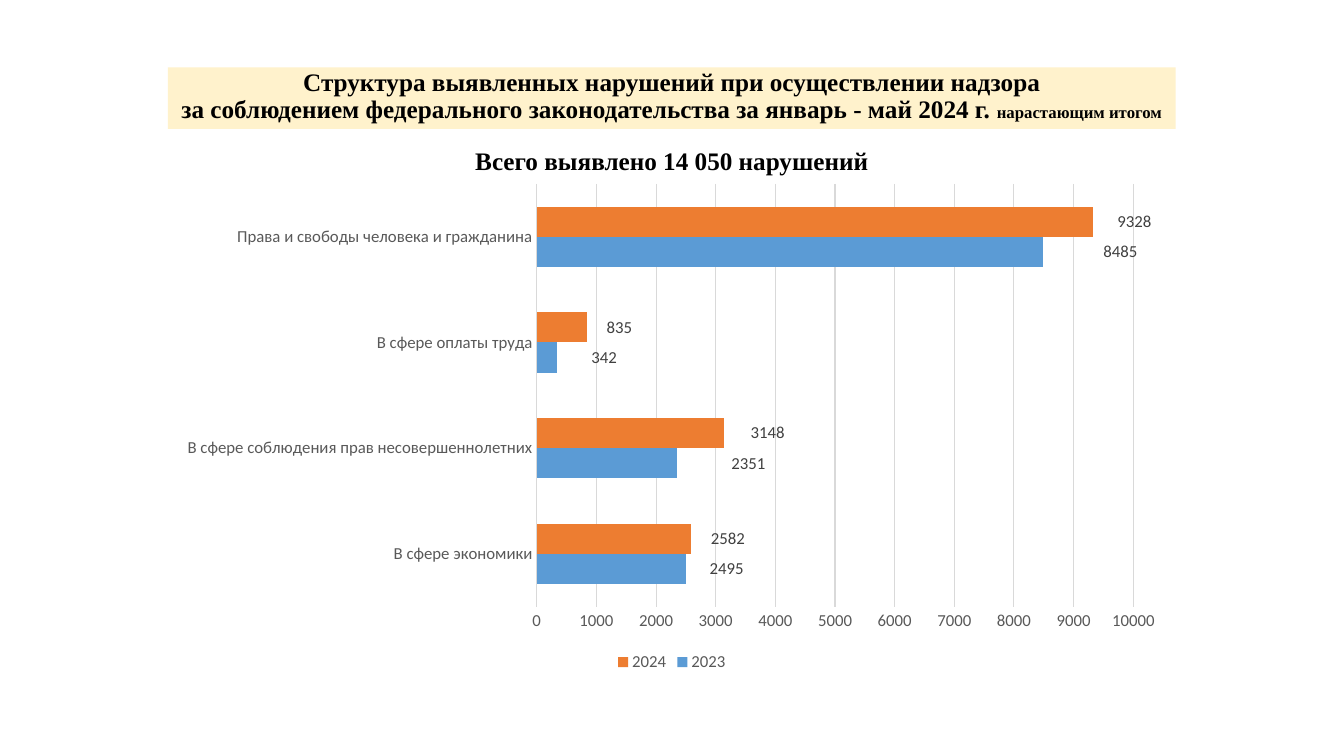
from dataclasses import dataclass

from lxml.etree import SubElement
from pptx import Presentation
from pptx.chart.data import CategoryChartData
from pptx.chart.series import BarSeries
from pptx.dml.color import RGBColor as RGB
from pptx.enum.chart import XL_CHART_TYPE as ChartType, XL_LABEL_POSITION as LabelPos
from pptx.enum.chart import XL_LEGEND_POSITION as LegendPos, XL_TICK_MARK as Tick
from pptx.enum.text import MSO_ANCHOR as Anchor, MSO_AUTO_SIZE as AutoSize, PP_ALIGN as Align
from pptx.oxml.ns import qn
from pptx.slide import Slide
from pptx.text.text import Font
from pptx.util import Cm, Pt


@dataclass(frozen=True)
class Theme:
    heading_font: str = "Times New Roman"
    chart_font: str = "Calibri"
    heading_size: int = 18
    note_size: int = 12
    chart_size: int = 12
    ink: str = "000000"
    band: str = "FFF2CC"
    axis: str = "595959"
    label: str = "404040"
    grid: str = "D9D9D9"


@dataclass(frozen=True)
class YearSeries:
    year: str
    values: tuple[int, ...]
    color: str
    label_shifts: tuple[float, ...]


THEME = Theme()
LEFT, WIDTH = Cm(4.23), Cm(25.4)
PLOT_AREA = {"x": 0.366, "y": 0.021, "w": 0.592, "h": 0.841}
SPHERES = (
    "В сфере экономики",
    "В сфере соблюдения прав несовершеннолетних",
    "В сфере оплаты труда",
    "Права и свободы человека и гражданина",
)
YEARS = (
    YearSeries("2023", (2495, 2351, 342, 8485), "5B9BD5", (0.02, 0.05, 0.03, 0.056)),
    YearSeries("2024", (2582, 3148, 835, 9328), "ED7D31", (0.016, 0.022, 0.016, 0.02)),
)


def style_font(font: Font, name: str, size: int, color: str, bold: bool = False) -> None:
    """Apply one type style."""
    font.name, font.size, font.bold = name, Pt(size), bold
    font.color.rgb = RGB.from_string(color)


def style_heading(font: Font) -> None:
    """Apply the heading type style."""
    style_font(font, THEME.heading_font, THEME.heading_size, THEME.ink, bold=True)


def add_title(s: Slide) -> None:
    """Fill the title placeholder and its coloured band."""
    sp = s.shapes.title
    sp.left, sp.top, sp.width, sp.height = LEFT, Cm(1.7), WIDTH, Cm(1.55)
    sp.fill.solid()
    sp.fill.fore_color.rgb = RGB.from_string(THEME.band)
    tf = sp.text_frame
    tf.word_wrap, tf.auto_size, tf.vertical_anchor = True, AutoSize.NONE, Anchor.BOTTOM
    p = tf.paragraphs[0]
    p.alignment, p.line_spacing = Align.CENTER, 0.9
    style_heading(p.font)
    p.add_run().text = "Структура выявленных нарушений при осуществлении надзора"
    p.add_line_break()
    p.add_run().text = "за соблюдением федерального законодательства за январь - май 2024 г. "
    r = p.add_run()
    r.text = "нарастающим итогом"
    r.font.size = Pt(THEME.note_size)


def add_total(s: Slide) -> None:
    """Add the line with the total number of violations."""
    tf = s.shapes.add_textbox(LEFT, Cm(3.68), WIDTH, Cm(0.91)).text_frame
    tf.word_wrap = True
    p = tf.paragraphs[0]
    p.text = "Всего выявлено 14 050 нарушений"
    p.alignment, p.line_spacing = Align.CENTER, 0.8
    style_heading(p.font)


def add_layout(parent, **sizes: float):
    """Give a chart part a manual layout and return the layout element."""
    layout = SubElement(parent, qn("c:layout"))
    manual = SubElement(layout, qn("c:manualLayout"))
    for tag, value in sizes.items():
        SubElement(manual, qn(f"c:{tag}")).set("val", str(value))
    return layout


def style_series(series: BarSeries, spec: YearSeries) -> None:
    """Colour a series and set its shifted value labels."""
    series.format.fill.solid()
    series.format.fill.fore_color.rgb = RGB.from_string(spec.color)
    series.invert_if_negative = False
    labels = series.data_labels
    labels.show_value, labels.position = True, LabelPos.OUTSIDE_END
    style_font(labels.font, THEME.chart_font, THEME.chart_size, THEME.label)
    for i in range(len(spec.values)):
        label = series.points[i].data_label
        style_font(label.font, THEME.chart_font, THEME.chart_size, THEME.label)
        label.position = LabelPos.OUTSIDE_END
    ser = series._element
    for node, shift in zip(ser.xpath("c:dLbls/c:dLbl"), spec.label_shifts):
        node.insert(1, add_layout(node, x=shift, y=0))
    for node in ser.xpath("c:dLbls/c:showLeaderLines"):
        node.set("val", "0")


def add_violations_chart(s: Slide) -> None:
    """Add the bar chart of violations by sphere and year."""
    data = CategoryChartData()
    data.categories = SPHERES
    for spec in YEARS:
        data.add_series(spec.year, spec.values)
    chart = s.shapes.add_chart(
        ChartType.BAR_CLUSTERED, LEFT, Cm(4.37), WIDTH, Cm(12.67), data
    ).chart
    chart.has_title = False
    style_font(chart.font, THEME.chart_font, THEME.chart_size, THEME.axis)
    chart.has_legend = True
    chart.legend.position, chart.legend.include_in_layout = LegendPos.BOTTOM, False
    style_font(chart.legend.font, THEME.chart_font, THEME.chart_size, THEME.axis)

    for axis in (chart.category_axis, chart.value_axis):
        axis.major_tick_mark = axis.minor_tick_mark = Tick.NONE
        axis.format.line.fill.background()
        style_font(axis.tick_labels.font, THEME.chart_font, THEME.chart_size, THEME.axis)
    axis = chart.value_axis
    axis.minimum_scale, axis.maximum_scale, axis.major_unit = 0, 10000, 1000
    grid = axis.major_gridlines.format.line
    grid.width, grid.color.rgb = Pt(0.75), RGB.from_string(THEME.grid)

    plot = chart.plots[0]
    plot.gap_width, plot.vary_by_categories = 150, False
    for series, spec in zip(plot.series, YEARS):
        style_series(series, spec)
    area = chart._chartSpace.xpath("c:chart/c:plotArea")[0]
    for old in area.xpath("c:layout"):
        area.remove(old)
    area.insert(0, add_layout(area, layoutTarget="inner", xMode="edge", yMode="edge", **PLOT_AREA))


def main() -> None:
    """Build the slide and save it."""
    prs = Presentation()
    prs.slide_width, prs.slide_height = Cm(33.87), Cm(19.05)
    s = prs.slides.add_slide(prs.slide_layouts.get_by_name("Title Only"))
    add_title(s)
    add_total(s)
    add_violations_chart(s)
    prs.save("out.pptx")


if __name__ == "__main__":
    main()
